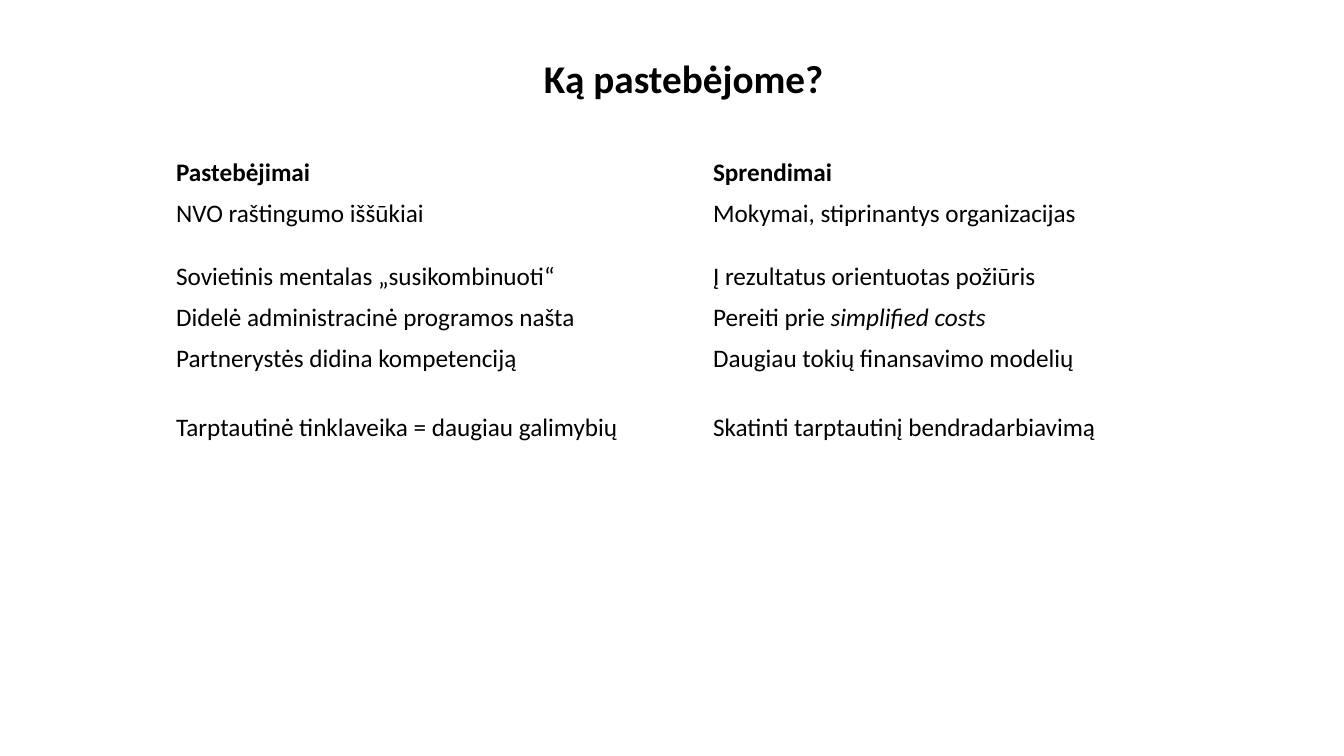
from lxml import etree
from pptx import Presentation
from pptx.dml.color import RGBColor
from pptx.enum.text import MSO_ANCHOR, MSO_AUTO_SIZE, PP_ALIGN
from pptx.oxml.ns import qn
from pptx.util import Pt

TOP = MSO_ANCHOR.TOP
GROW = MSO_AUTO_SIZE.SHAPE_TO_FIT_TEXT
CENTER = PP_ALIGN.CENTER
EMU_PER_PX = 914400 / 100.8
FONT = "Calibri"
BLACK, WHITE = "000000", "FFFFFF"
TITLE_ONLY = 5

# Each cell is a list of (text, italic) spans
TABLE_ROWS = [
    ([("Pastebėjimai", False)], [("Sprendimai", False)]),
    ([("NVO raštingumo iššūkiai", False)],
     [("Mokymai, stiprinantys organizacijas", False)]),
    ([("Sovietinis mentalas „susikombinuoti“", False)],
     [("Į rezultatus orientuotas požiūris", False)]),
    ([("Didelė administracinė programos našta", False)],
     [("Pereiti prie ", False), ("simplified costs", True)]),
    ([("Partnerystės didina kompetenciją", False)],
     [("Daugiau tokių finansavimo modelių", False)]),
    ([("Tarptautinė tinklaveika = daugiau galimybių", False)],
     [("Skatinti tarptautinį bendradarbiavimą", False)]),
]
ROW_HEIGHTS = [41, 63, 41, 41, 70, 180]


def px(length):
    return round(length * EMU_PER_PX)


def color(value):
    return RGBColor.from_string(value)


def add_span(para, text, size=18, bold=False, italic=False, ink=BLACK):
    span = para.add_run()
    span.text = text
    span.font.name = FONT
    span.font.size = Pt(size)
    span.font.bold = bold
    span.font.italic = italic
    span.font.color.rgb = color(ink)


def add_borders(cell, bottom):
    properties = cell._tc.get_or_add_tcPr()
    for side, width in (("L", 1), ("R", 1), ("T", 1), ("B", bottom)):
        line = etree.SubElement(properties, qn(f"a:ln{side}"), w=str(Pt(width)))
        fill = etree.SubElement(line, qn("a:solidFill"))
        etree.SubElement(fill, qn("a:srgbClr"), val=WHITE)


def place_title(page, left, top, width, height):
    title = page.shapes.title
    title.left, title.top = px(left), px(top)
    title.width, title.height = px(width), px(height)
    frame = title.text_frame
    frame.word_wrap = True
    frame.auto_size = GROW
    frame.vertical_anchor = TOP
    frame.margin_left, frame.margin_right = px(10), px(19)
    frame.margin_top = frame.margin_bottom = px(5)
    para = frame.paragraphs[0]
    para.alignment = CENTER
    para.line_spacing = 1.07
    para.space_after = Pt(8)
    add_span(para, "Ką pastebėjome?", size=28, bold=True)


def place_table(page, left, top, width):
    table = page.shapes.add_table(
        len(TABLE_ROWS), 2, px(left), px(top), px(width), px(sum(ROW_HEIGHTS))
    ).table
    table.horz_banding = False
    table.first_row = False
    for column in table.columns:
        column.width = px(width // 2)
    for row_index, (row, height) in enumerate(zip(TABLE_ROWS, ROW_HEIGHTS)):
        table.rows[row_index].height = px(height)
        is_header = row_index == 0
        for column_index, spans in enumerate(row):
            cell = table.cell(row_index, column_index)
            cell.vertical_anchor = TOP
            add_borders(cell, bottom=3 if is_header else 1)
            cell.fill.background()
            for text, italic in spans:
                add_span(cell.text_frame.paragraphs[0], text,
                         bold=is_header, italic=italic)


def main():
    deck = Presentation()
    deck.slide_width, deck.slide_height = px(1344), px(756)
    page = deck.slides.add_slide(deck.slide_layouts[TITLE_ONLY])
    page.background.fill.solid()
    page.background.fill.fore_color.rgb = color(WHITE)
    place_title(page, 59, 46, 1258, 58)
    place_table(page, 166, 152, 1074)
    deck.save("out.pptx")


if __name__ == "__main__":
    main()
